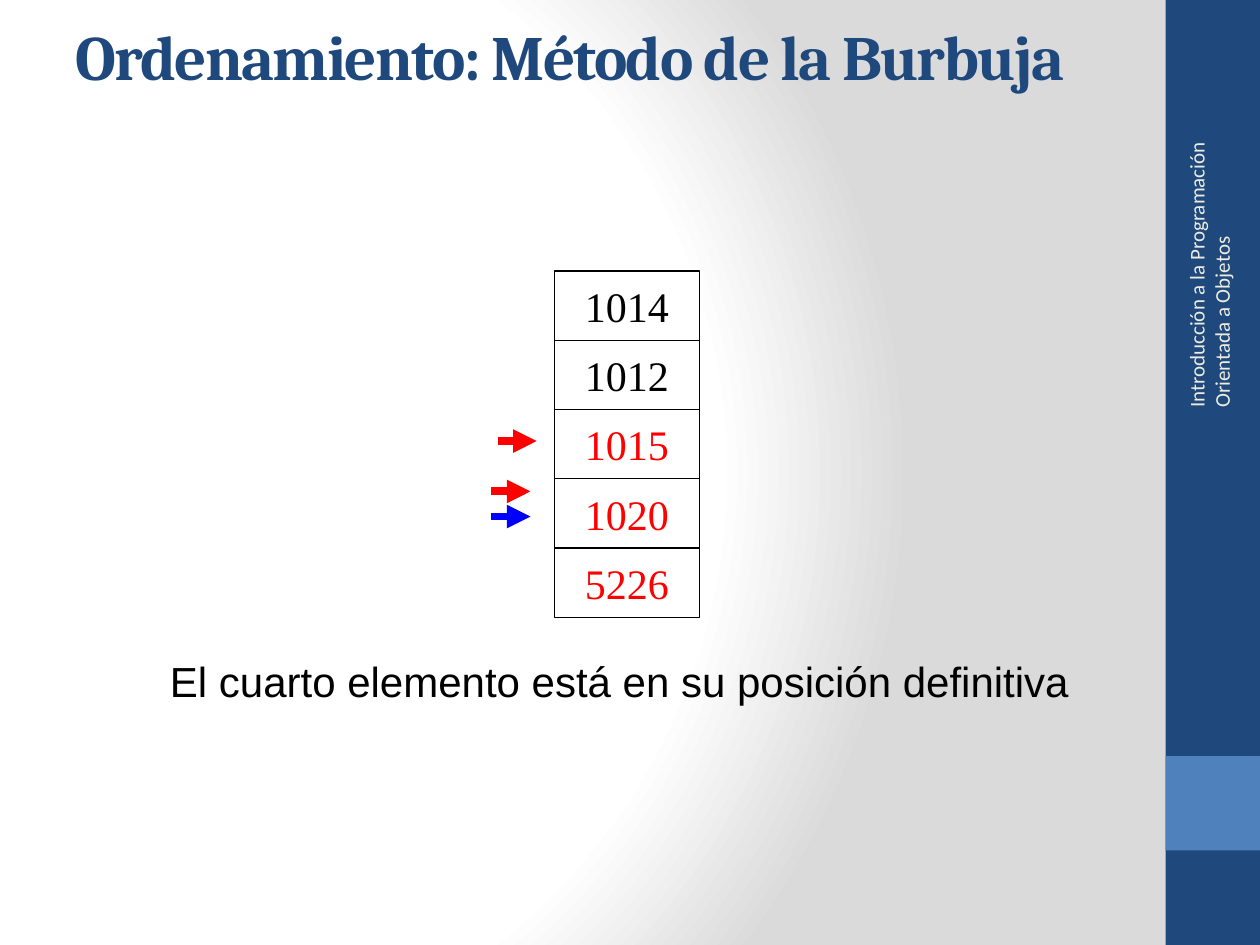
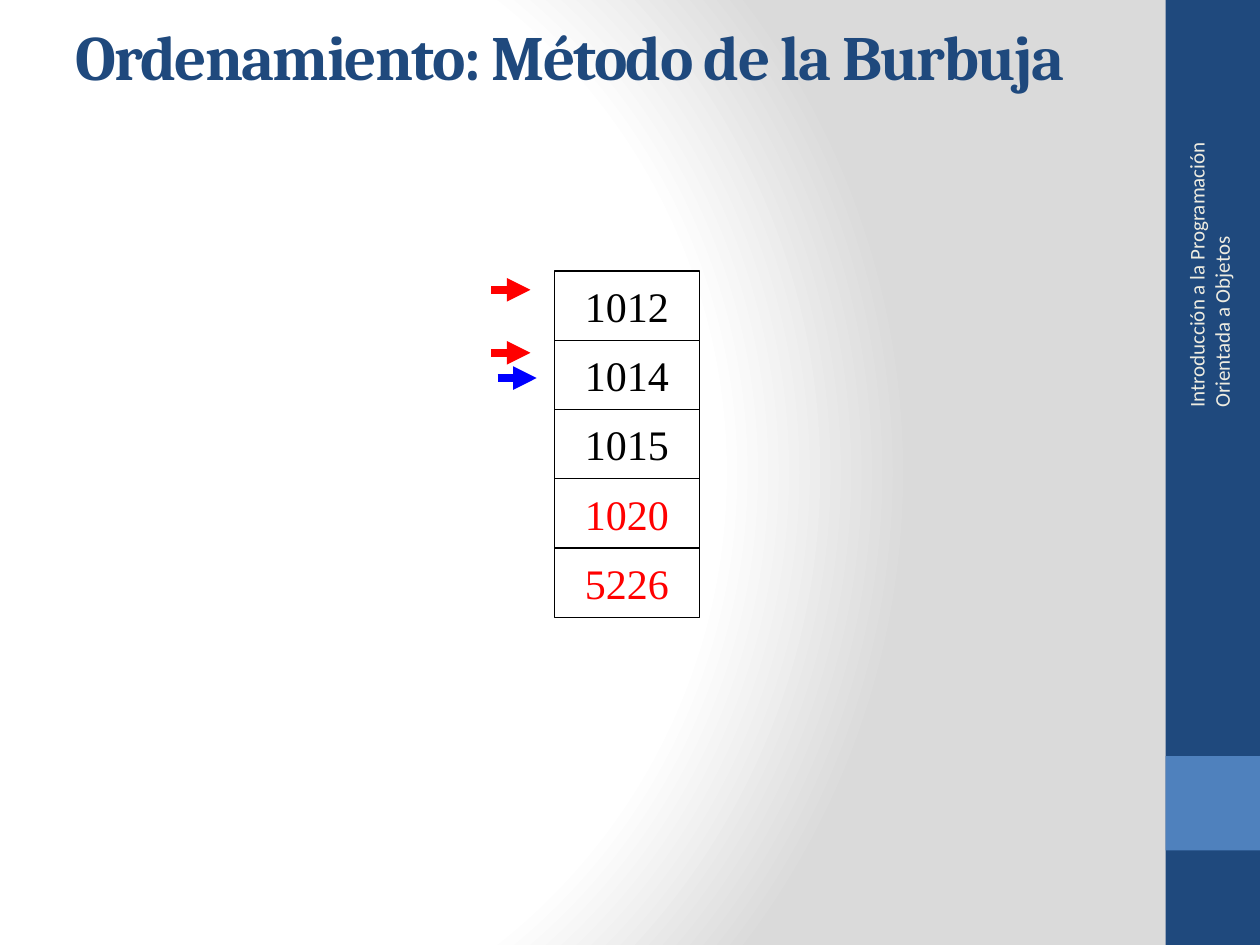
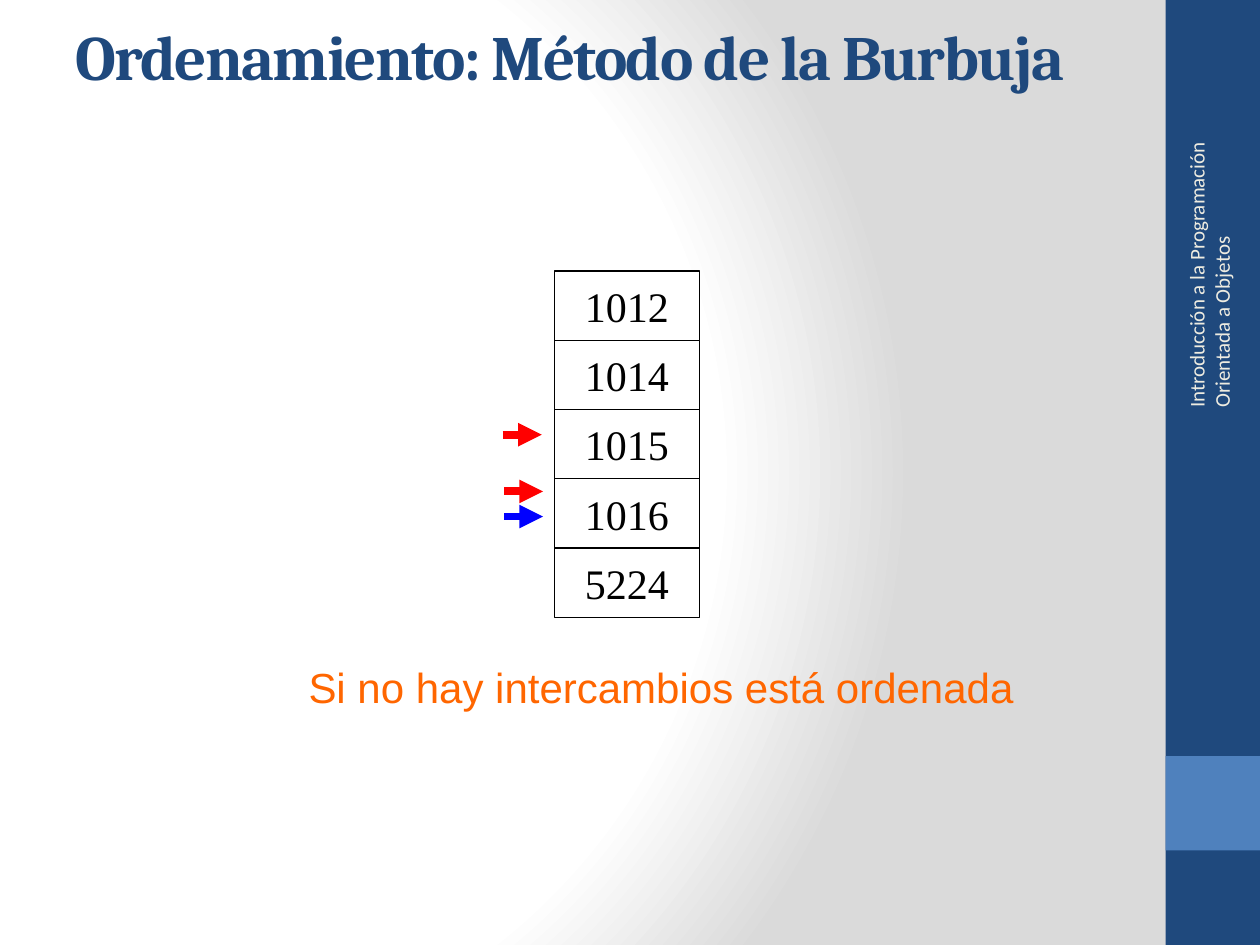
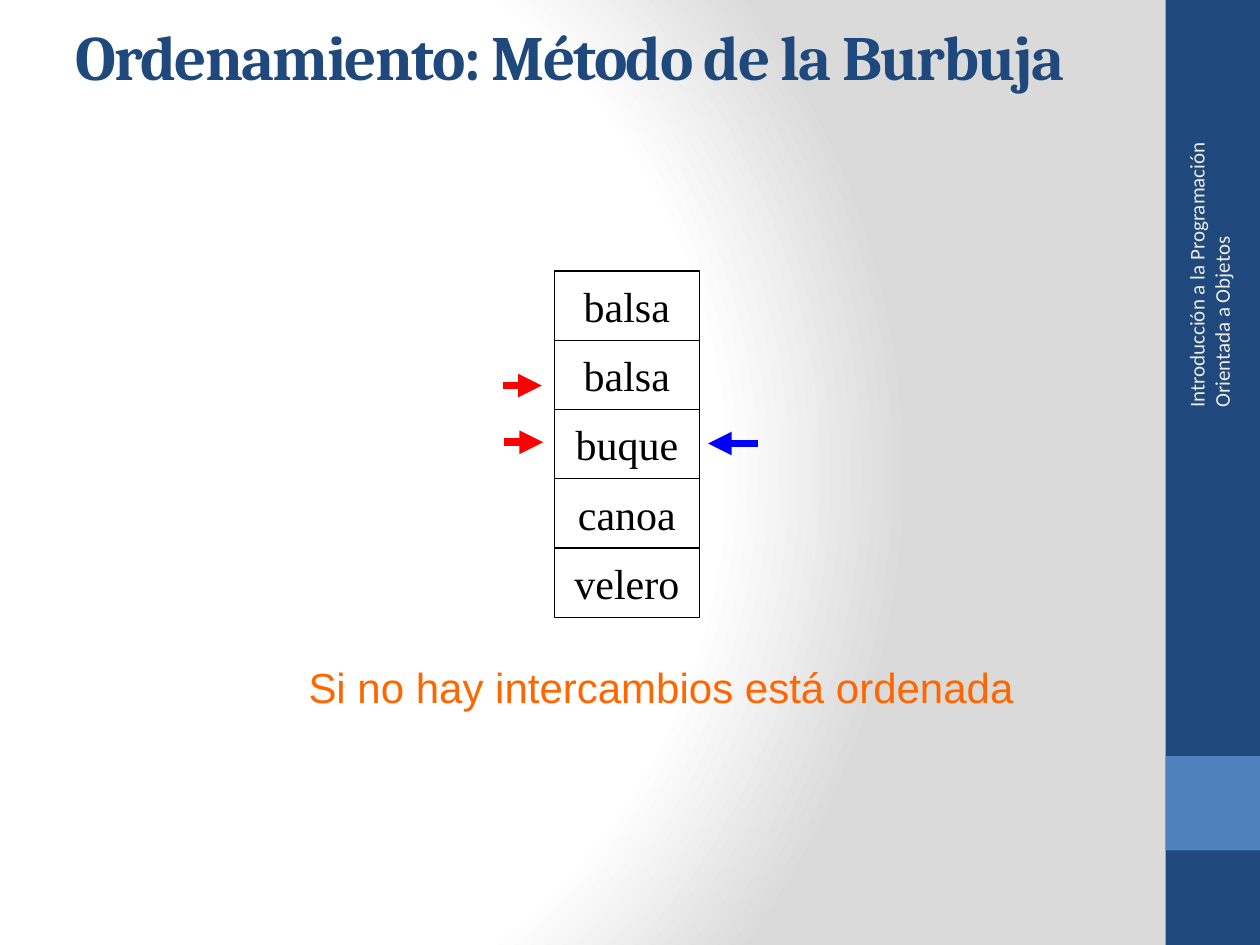
from lxml.etree import SubElement
from pptx import Presentation
from pptx.dml.color import RGBColor
from pptx.enum.shapes import MSO_CONNECTOR, MSO_SHAPE
from pptx.enum.text import MSO_ANCHOR, MSO_AUTO_SIZE, PP_ALIGN
from pptx.oxml.ns import qn
from pptx.util import Inches, Pt

NAVY, SKY, CREAM = "1F497D", "4F81BD", "EEECE1"
BLACK, WHITE, RED, BLUE, ORANGE = "000000", "FFFFFF", "FF0000", "0000FF", "FF6600"
GLOW_STOPS = [(0, WHITE), (75, WHITE), (100, "DADADA")]
GLOW_CENTRE = {"l": "20000", "t": "50000", "r": "100000", "b": "50000"}
TITLE = "Ordenamiento: Método de la Burbuja"
COURSE = "Introducción a la Programación Orientada a Objetos"
SORTED_NOTE = ("Si no hay intercambios está ordenada", 2.35, 5.2, 5.85, ORANGE)
CELL_LEFT, CELL_TOP, CELL_WIDTH, CELL_HEIGHT = 4.4, 2.15, 1.15, 0.55
ARROW_LENGTH = 0.31

STEPS = [
    {
        "values": ["1014", "1012", "1015", "1020", "5226"],
        "placed": 3,
        "arrows": [(3.9, 4.1, BLUE), (3.9, 3.9, RED), (3.95, 3.5, RED)],
        "note": ("El cuarto elemento está en su posición definitiva", 1.25, 5.15, 7.85, BLACK),
    },
    {
        "values": ["1012", "1014", "1015", "1020", "5226"],
        "placed": 2,
        "arrows": [(3.95, 3, BLUE), (3.9, 2.8, RED), (3.9, 2.3, RED)],
    },
    {
        "values": ["1012", "1014", "1015", "1016", "5224"],
        "arrows": [(3.99, 3.45, RED), (4, 3.9, RED), (4, 4.1, BLUE)],
        "note": SORTED_NOTE,
    },
    {
        "values": ["balsa", "balsa", "buque", "canoa", "velero"],
        "arrows": [(6.02, 3.52, BLUE, -0.4), (3.99, 3.06, RED), (4, 3.51, RED)],
        "note": SORTED_NOTE,
    },
]


def color(code):
    """Turn a hex string into a colour."""
    return RGBColor.from_string(code)


class Deck:
    """Hold the shared style and the slide being built."""

    def __init__(self):
        """Start an empty 10 by 7.5 inch presentation."""
        self.presentation = Presentation()
        self.presentation.slide_width = Inches(10)
        self.presentation.slide_height = Inches(7.5)
        self.slide = None

    def start_slide(self):
        """Add a slide with its background, side band, course name and title."""
        self.slide = self.presentation.slides.add_slide(self.presentation.slide_layouts[6])
        self.background()
        self.box(9.25, 0, 0.75, 7.5, NAVY)
        self.box(9.25, 6, 0.75, 0.75, SKY)
        course = self.text(COURSE, 8.26, 1.8, 2.67, 0.4, "Calibri", 12, CREAM)
        course.rotation = 270
        course.text_frame.vertical_anchor = MSO_ANCHOR.MIDDLE
        title = self.text(TITLE, 0.5, 0.09, 8.98, 0.66, "Cambria", 36, NAVY)
        title.text_frame.paragraphs[0].runs[0].font.bold = True
        next(title.element.iter(qn("a:rPr"))).set("spc", "-100")

    def background(self):
        """Fill the background with a circular glow."""
        self.slide.background.fill.gradient()
        gradient = next(self.slide.element.iter(qn("a:gradFill")))
        for part in list(gradient):
            gradient.remove(part)
        stops = SubElement(gradient, qn("a:gsLst"))
        for position, code in GLOW_STOPS:
            stop = SubElement(stops, qn("a:gs"), pos=str(position * 1000))
            SubElement(stop, qn("a:srgbClr"), val=code)
        glow = SubElement(gradient, qn("a:path"), path="circle")
        SubElement(glow, qn("a:fillToRect"), **GLOW_CENTRE)

    def box(self, left, top, width, height, fill):
        """Add a plain rectangle without an outline."""
        box = self.slide.shapes.add_shape(
            MSO_SHAPE.RECTANGLE, Inches(left), Inches(top), Inches(width), Inches(height))
        box.shadow.inherit = False
        box.fill.solid()
        box.fill.fore_color.rgb = color(fill)
        box.line.fill.background()
        return box

    def letter(self, frame, wording, font, size, code):
        """Set and format one line of text."""
        frame.text = wording
        style = frame.paragraphs[0].runs[0].font
        style.name, style.size, style.color.rgb = font, Pt(size), color(code)

    def text(self, wording, left, top, width, height, font, size, code):
        """Add a wrapping text box."""
        holder = self.slide.shapes.add_textbox(
            Inches(left), Inches(top), Inches(width), Inches(height))
        holder.text_frame.word_wrap = True
        self.letter(holder.text_frame, wording, font, size, code)
        return holder

    def column(self, values, placed):
        """Stack the list values, with the last placed ones in red."""
        for row, value in enumerate(values):
            cell = self.box(CELL_LEFT, CELL_TOP + row * CELL_HEIGHT, CELL_WIDTH, CELL_HEIGHT, WHITE)
            cell.line.color.rgb = color(BLACK)
            cell.line.width = Pt(0.75)
            frame = cell.text_frame
            frame.word_wrap = False
            frame.vertical_anchor = MSO_ANCHOR.MIDDLE
            code = RED if row >= len(values) - placed else BLACK
            self.letter(frame, value, "Times New Roman", 24, code)
            frame.paragraphs[0].alignment = PP_ALIGN.CENTER

    def arrow(self, start, height, code, length=ARROW_LENGTH):
        """Add a thick horizontal arrow."""
        arrow = self.slide.shapes.add_connector(
            MSO_CONNECTOR.STRAIGHT, Inches(start), Inches(height),
            Inches(start + length), Inches(height))
        arrow.line.color.rgb = color(code)
        arrow.line.width = Pt(4.5)
        properties = arrow.element.spPr
        SubElement(properties.find(qn("a:ln")), qn("a:tailEnd"), type="triangle")
        SubElement(properties, qn("a:effectLst"))

    def note(self, wording, left, top, width, code):
        """Add the remark below the column."""
        remark = self.text(wording, left, top, width, 0.5, "Arial", 24, code)
        remark.text_frame.auto_size = MSO_AUTO_SIZE.SHAPE_TO_FIT_TEXT


def main():
    """Build one slide for each sorting step."""
    deck = Deck()
    for step in STEPS:
        deck.start_slide()
        deck.column(step["values"], step.get("placed", 0))
        for arrow in step["arrows"]:
            deck.arrow(*arrow)
        if "note" in step:
            deck.note(*step["note"])
    deck.presentation.save("out.pptx")


if __name__ == "__main__":
    main()
